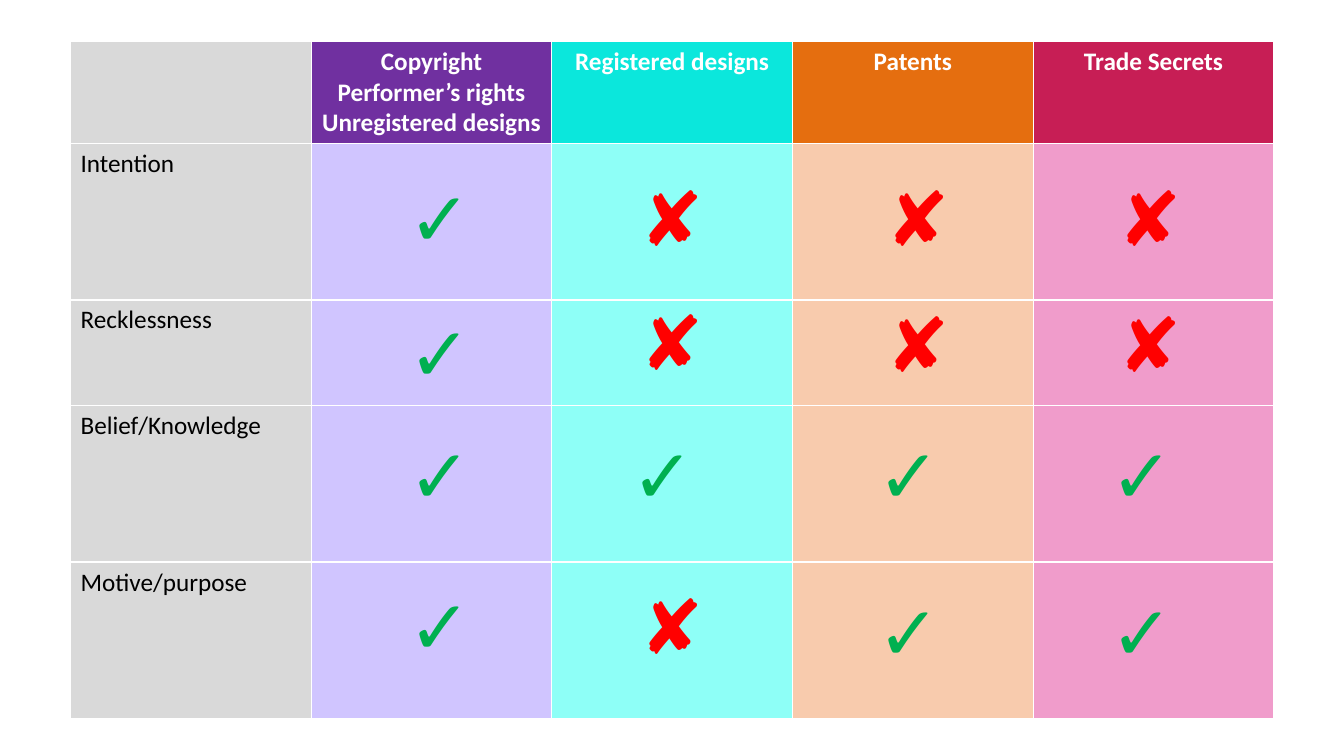
from pptx import Presentation
from pptx.dml.color import RGBColor
from pptx.enum.text import MSO_AUTO_SIZE, PP_ALIGN
from pptx.util import Pt

FONT = "Calibri"
COLORS = {
    "white": "FFFFFF", "black": "000000", "grey": "D9D9D9",
    "purple": "7030A0", "lilac": "D0C5FF",
    "turquoise": "0BE7DC", "aqua": "8EFFF7",
    "orange": "E56E0F", "peach": "F8CBAD",
    "crimson": "C71E55", "pink": "F09CCB",
    "green": "00B050", "red": "FF0000",
}
# Header lines, header fill, body fill
COLUMNS = [
    ([], "grey", "grey"),
    (["Copyright", "Performer’s rights", "Unregistered designs"], "purple", "lilac"),
    (["Registered designs"], "turquoise", "aqua"),
    (["Patents"], "orange", "peach"),
    (["Trade Secrets"], "crimson", "pink"),
]
# Label, row height, marks, top of each mark
MENTAL_STATES = [
    ("Intention", 111.6, "✓✘✘✘", [118.8] * 4),
    ("Recklessness", 75.6, "✓✘✘✘", [214.6, 207.4, 208.8, 208.8]),
    ("Belief/Knowledge", 111.6, "✓✓✓✓", [302.4] * 4),
    ("Motive/purpose", 111.6, "✓✘✓✓", [409.7, 409.7, 414, 414]),
]
MARK_LEFTS = [284.4, 444.2, 620, 786]
MARK_STYLES = {"✓": (55.4, "green"), "✘": (71.3, "red")}  # box width, colour
HEADER_HEIGHT = 66.2
COLUMN_WIDTH = 171.9


def rgb(name):
    return RGBColor.from_string(COLORS[name])


def write_lines(frame, lines, size, color, bold, align):
    for index, line in enumerate(lines):
        para = frame.add_paragraph() if index else frame.paragraphs[0]
        para.alignment = align
        span = para.add_run()
        span.text = line
        span.font.name = FONT
        span.font.size = Pt(size)
        span.font.bold = bold
        span.font.color.rgb = rgb(color)


def fill_cell(cell, fill, lines=(), color="black", bold=False, align=PP_ALIGN.LEFT):
    cell.fill.solid()
    cell.fill.fore_color.rgb = rgb(fill)
    write_lines(cell.text_frame, lines, 18, color, bold, align)


def add_rights_table(page):
    """Add the grid; its default style supplies the white rules."""
    heights = [HEADER_HEIGHT] + [state[1] for state in MENTAL_STATES]
    frame = page.shapes.add_table(
        len(heights), len(COLUMNS), Pt(50.4), Pt(29.5),
        Pt(COLUMN_WIDTH * len(COLUMNS)), Pt(sum(heights)))
    table = frame.table
    for row, height in zip(table.rows, heights):
        row.height = Pt(height)
    for column, (header, header_fill, body_fill) in enumerate(COLUMNS):
        table.columns[column].width = Pt(COLUMN_WIDTH)
        fill_cell(table.cell(0, column), header_fill, header,
                  "white", True, PP_ALIGN.CENTER)
        for row, state in enumerate(MENTAL_STATES, start=1):
            label = [] if column else [state[0]]
            fill_cell(table.cell(row, column), body_fill, label)


def add_mark(page, mark, left, top):
    width, color = MARK_STYLES[mark]
    box = page.shapes.add_textbox(Pt(left), Pt(top), Pt(width), Pt(72.7))
    box.text_frame.word_wrap = False
    box.text_frame.auto_size = MSO_AUTO_SIZE.SHAPE_TO_FIT_TEXT
    write_lines(box.text_frame, [mark], 54, color, True, PP_ALIGN.CENTER)


def main():
    deck = Presentation()
    deck.slide_width, deck.slide_height = Pt(960), Pt(540)
    page = deck.slides.add_slide(deck.slide_layouts[6])
    add_rights_table(page)
    for _, _, marks, tops in MENTAL_STATES:
        for mark, left, top in zip(marks, MARK_LEFTS, tops):
            add_mark(page, mark, left, top)
    deck.save("out.pptx")


if __name__ == "__main__":
    main()
